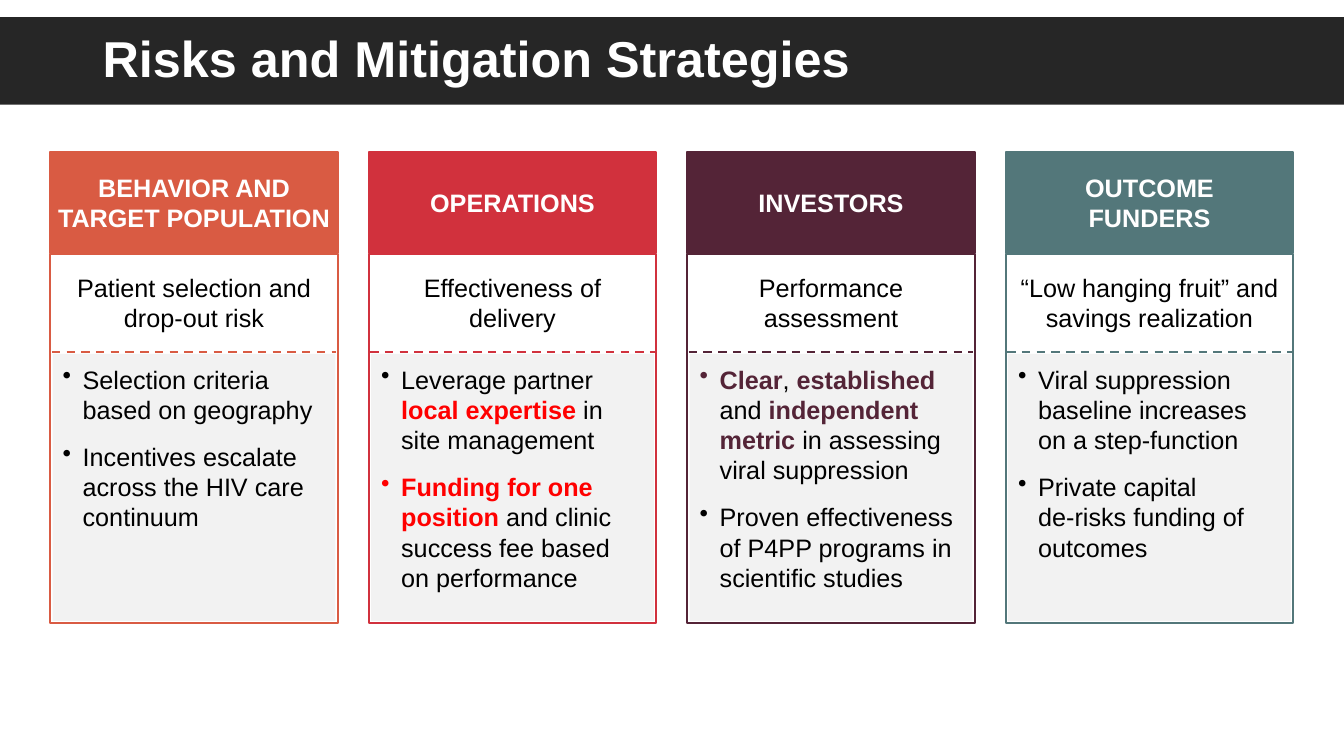
import pptx
import pptx.util
import pptx.dml.color
import pptx.enum.dml
import pptx.enum.shapes
import pptx.enum.text
from lxml import etree

Pt = pptx.util.Pt
RGB = pptx.dml.color.RGBColor
ALIGN = pptx.enum.text.PP_ALIGN
ANCHOR = pptx.enum.text.MSO_ANCHOR

# Content: *stars* mark emphasis, a newline breaks a line
TITLE = "Risks and Mitigation Strategies"
COLUMNS = [
    dict(head=["BEHAVIOR AND TARGET POPULATION"], color="D95B43", accent="D95B43",
         risk="Patient selection and drop-out risk",
         points=["Selection criteria based on geography",
                 "Incentives escalate across the HIV care continuum"]),
    dict(head=["OPERATIONS"], color="D1313D", accent="FF0000",
         risk="Effectiveness of delivery",
         points=["Leverage partner *local expertise* in site management",
                 "*Funding for one position *and clinic success fee based on performance"]),
    dict(head=["INVESTORS"], color="542437", accent="542437",
         risk="Performance assessment",
         points=["*Clear*, *established* and *independent metric *in assessing viral suppression",
                 "Proven effectiveness of P4PP programs in scientific studies"]),
    dict(head=["OUTCOME", "FUNDERS"], color="53777A", accent="53777A",
         risk="“Low hanging fruit” and savings realization",
         points=["Viral suppression baseline increases on a step-function",
                 "Private capital \nde-risks funding of outcomes"]),
]

THEME = dict(font="Arial", title=36, body=18, bar="262626", panel="F2F2F2",
             white="FFFFFF", black="000000", line=1.5)

# Layout in points
WIDE, HIGH = 960, 540
LEFT, STEP, COL = 36, 227.5, 205.2
HEAD_TOP, HEAD_H = 108.7, 72
BODY_TOP, BODY_H = 181.2, 263.7
RISK_TOP, RISK_H = 190.8, 51
RULE_Y = 251.7
PANEL_TOP, PANEL_H = 252.7, 190.8
INSET, BULLET = 1.6, 14.4

deck = pptx.Presentation()
deck.slide_width, deck.slide_height = Pt(WIDE), Pt(HIGH)
slide = deck.slides.add_slide(deck.slide_layouts[6])


def color(code):
    return RGB.from_string(code)


def box(x, y, w, h, fill=None, line=None):
    kind = pptx.enum.shapes.MSO_SHAPE.RECTANGLE
    shape = slide.shapes.add_shape(kind, Pt(x), Pt(y), Pt(w), Pt(h))
    shape.shadow.inherit = False
    if fill:
        shape.fill.solid()
        shape.fill.fore_color.rgb = color(fill)
    else:
        shape.fill.background()
    if line:
        shape.line.color.rgb = color(line)
        shape.line.width = Pt(THEME["line"])
    else:
        shape.line.fill.background()
    return shape


def label(x, y, w, h):
    return slide.shapes.add_textbox(Pt(x), Pt(y), Pt(w), Pt(h))


def write(shape, lines, size=THEME["body"], ink=THEME["black"], accent=None,
          bold=False, align=ALIGN.LEFT, anchor=ANCHOR.TOP, pad=(7.2, 3.6),
          after=0, space=None, bullet=False):
    frame = shape.text_frame
    frame.word_wrap = True
    frame.vertical_anchor = anchor
    frame.margin_left = frame.margin_right = Pt(pad[0])
    frame.margin_top = frame.margin_bottom = Pt(pad[1])
    for i, line in enumerate(lines):
        para = frame.paragraphs[0] if i == 0 else frame.add_paragraph()
        para.alignment = align
        para.space_after = Pt(after)
        if space:
            para.line_spacing = space
        if bullet:
            props = para._p.get_or_add_pPr()
            props.set("marL", str(Pt(BULLET)))
            props.set("indent", str(-Pt(BULLET)))
            mark = etree.SubElement(props, pptx.oxml.ns.qn("a:buChar"))
            mark.set("char", "•")
        for j, part in enumerate(line.split("*")):
            strong = j % 2 == 1
            for k, piece in enumerate(part.split("\n")):
                if k:
                    para.add_line_break()
                if piece:
                    run = para.add_run()
                    run.text = piece
                    run.font.name = THEME["font"]
                    run.font.size = Pt(size)
                    run.font.bold = bold or strong
                    run.font.color.rgb = color(accent if strong else ink)


def rule(x, y, w, ink):
    kind = pptx.enum.shapes.MSO_CONNECTOR.STRAIGHT
    dash = slide.shapes.add_connector(kind, Pt(x), Pt(y), Pt(x + w), Pt(y))
    dash.line.color.rgb = color(ink)
    dash.line.width = Pt(THEME["line"])
    dash.line.dash_style = pptx.enum.dml.MSO_LINE.DASH
    etree.SubElement(dash._element.spPr, pptx.oxml.ns.qn("a:effectLst"))


# Title bar
box(0, 12.2, WIDE, 62.6, fill=THEME["bar"])
write(label(66.2, 12.2, 828, 63.4), [TITLE], size=THEME["title"],
      ink=THEME["white"], bold=True, anchor=ANCHOR.MIDDLE, space=0.9)

# Risk columns
for n, col in enumerate(COLUMNS):
    x, tint = LEFT + n * STEP, col["color"]
    inner, width = x + INSET, COL - 2 * INSET

    # Mitigation panel
    write(box(inner, PANEL_TOP, width, PANEL_H, fill=THEME["panel"]),
          col["points"], accent=col["accent"], pad=(7.2, 7.2), after=12, bullet=True)

    # Frame and heading
    box(x, BODY_TOP, COL, BODY_H, line=tint)
    write(box(x, HEAD_TOP, COL, HEAD_H, fill=tint, line=tint), col["head"],
          ink=THEME["white"], bold=True, align=ALIGN.CENTER,
          anchor=ANCHOR.MIDDLE, pad=(0, 3.6))

    # Risk and divider
    write(label(inner, RISK_TOP, width, RISK_H), [col["risk"]],
          align=ALIGN.CENTER, after=12)
    rule(x + 1, RULE_Y, COL - 2, tint)

deck.save("out.pptx")
